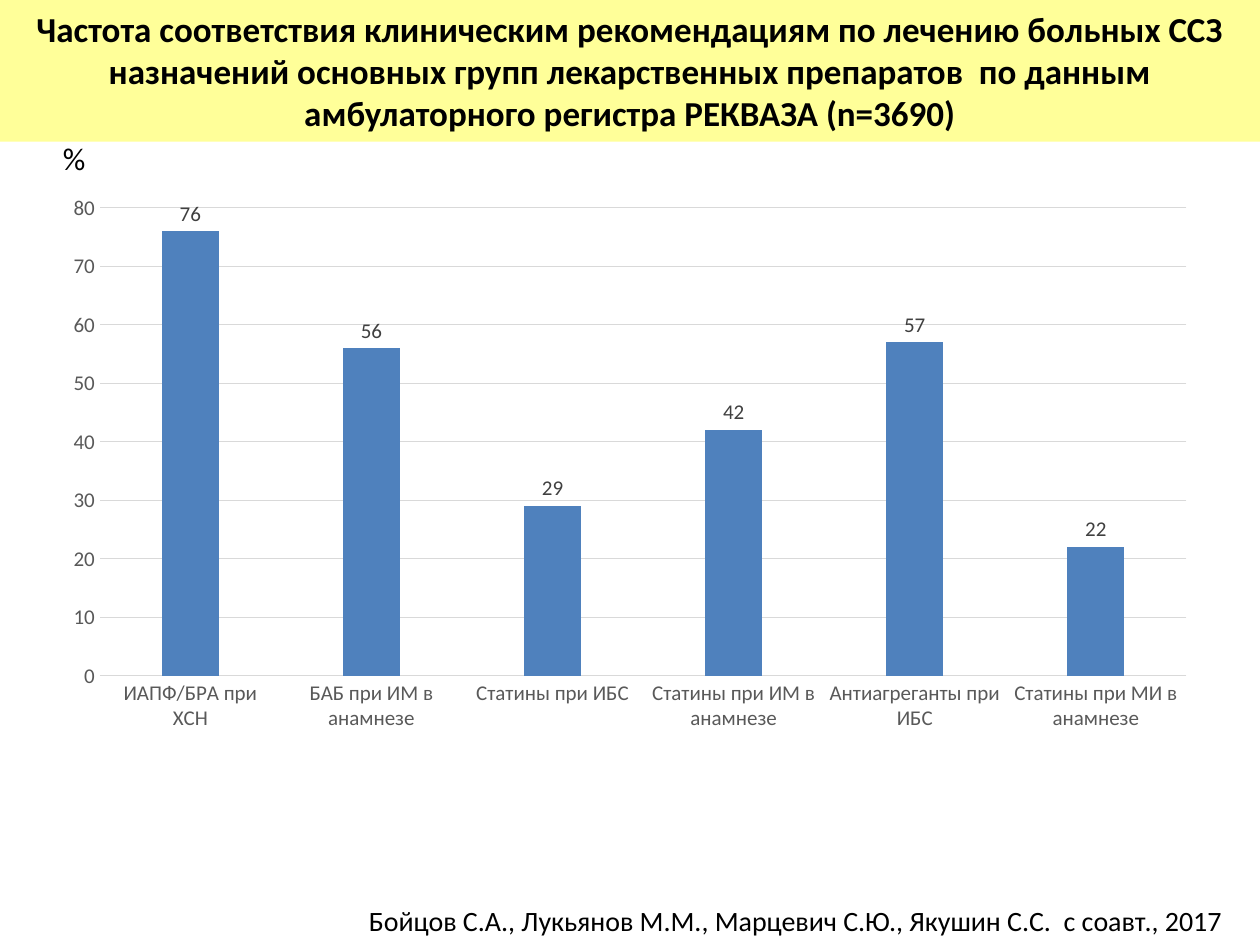
from typing import NamedTuple

from pptx import Presentation
from pptx.chart.data import CategoryChartData
from pptx.dml.color import RGBColor
from pptx.enum.chart import XL_CHART_TYPE, XL_LABEL_POSITION, XL_TICK_MARK
from pptx.enum.shapes import MSO_SHAPE
from pptx.enum.text import MSO_ANCHOR, MSO_AUTO_SIZE, PP_ALIGN
from pptx.util import Inches, Pt

FONT = "Calibri"
BLACK = RGBColor(0x00, 0x00, 0x00)
BANNER_YELLOW = RGBColor(0xFF, 0xFF, 0x99)
BAR_BLUE = RGBColor(0x4F, 0x81, 0xBD)
GRID_GREY = RGBColor(0xD9, 0xD9, 0xD9)
AXIS_GREY = RGBColor(0x59, 0x59, 0x59)
LABEL_GREY = RGBColor(0x40, 0x40, 0x40)

SLIDE_WIDTH, SLIDE_HEIGHT = Inches(10), Inches(7.5)

TITLE = (
    "Частота соответствия клиническим рекомендациям по лечению больных ССЗ "
    "назначений основных групп лекарственных препаратов  по данным "
    "амбулаторного регистра РЕКВАЗА (n=3690)"
)
CITATION = "Бойцов С.А., Лукьянов М.М., Марцевич С.Ю., Якушин С.С.  с соавт., 2017"


class Box(NamedTuple):
    """Place and size as shares of the slide's width and height."""
    left: float
    top: float
    width: float
    height: float

    def emu(self) -> tuple:
        return (
            int(self.left * SLIDE_WIDTH), int(self.top * SLIDE_HEIGHT),
            int(self.width * SLIDE_WIDTH), int(self.height * SLIDE_HEIGHT),
        )


class Prescription(NamedTuple):
    group: str
    percent: int


PRESCRIPTIONS = [
    Prescription("ИАПФ/БРА при ХСН", 76),
    Prescription("БАБ при ИМ в анамнезе", 56),
    Prescription("Статины при ИБС", 29),
    Prescription("Статины при ИМ в анамнезе", 42),
    Prescription("Антиагреганты при ИБС", 57),
    Prescription("Статины при МИ в анамнезе", 22),
]


def style_font(font, size: float, color: RGBColor, bold: bool = False) -> None:
    font.name = FONT
    font.size = Pt(size)
    font.bold = bold
    font.color.rgb = color


def write(frame, text: str, size: float, align: PP_ALIGN, bold: bool = False) -> None:
    paragraph = frame.paragraphs[0]
    paragraph.alignment = align
    run = paragraph.add_run()
    run.text = text
    style_font(run.font, size, BLACK, bold)


def add_label(slide, box: Box, text: str, size: float, align: PP_ALIGN, wrap: bool) -> None:
    frame = slide.shapes.add_textbox(*box.emu()).text_frame
    frame.word_wrap = wrap
    frame.auto_size = MSO_AUTO_SIZE.SHAPE_TO_FIT_TEXT
    write(frame, text, size, align)


def add_banner(slide, box: Box) -> None:
    banner = slide.shapes.add_shape(MSO_SHAPE.RECTANGLE, *box.emu())
    banner.shadow.inherit = False
    banner.fill.solid()
    banner.fill.fore_color.rgb = BANNER_YELLOW
    banner.line.fill.background()
    banner.text_frame.word_wrap = True
    banner.text_frame.vertical_anchor = MSO_ANCHOR.MIDDLE
    write(banner.text_frame, TITLE, 20, PP_ALIGN.CENTER, bold=True)


def style_line(line) -> None:
    line.color.rgb = GRID_GREY
    line.width = Pt(0.75)


def add_prescription_chart(slide, box: Box) -> None:
    data = CategoryChartData()
    data.categories = [item.group for item in PRESCRIPTIONS]
    data.add_series("Series 1", [item.percent for item in PRESCRIPTIONS])
    chart = slide.shapes.add_chart(
        XL_CHART_TYPE.COLUMN_CLUSTERED, *box.emu(), data
    ).chart
    chart.has_title = False
    chart.has_legend = False
    style_font(chart.font, 10, BLACK)

    for axis in (chart.category_axis, chart.value_axis):
        axis.major_tick_mark = axis.minor_tick_mark = XL_TICK_MARK.NONE
        style_font(axis.tick_labels.font, 12, AXIS_GREY)
    style_line(chart.category_axis.format.line)
    chart.value_axis.format.line.fill.background()
    style_line(chart.value_axis.major_gridlines.format.line)

    plot = chart.plots[0]
    plot.vary_by_categories = False
    plot.gap_width = 219
    plot.overlap = -27
    bars = plot.series[0]
    bars.format.fill.solid()
    bars.format.fill.fore_color.rgb = BAR_BLUE
    bars.data_labels.show_value = True
    bars.data_labels.position = XL_LABEL_POSITION.OUTSIDE_END
    style_font(bars.data_labels.font, 12, LABEL_GREY)


def main() -> None:
    presentation = Presentation()
    presentation.slide_width = SLIDE_WIDTH
    presentation.slide_height = SLIDE_HEIGHT
    slide = presentation.slides.add_slide(presentation.slide_layouts[6])

    add_label(slide, Box(0.16, 0.95, 0.82, 0.05), CITATION, 16, PP_ALIGN.RIGHT, wrap=True)
    add_prescription_chart(slide, Box(0.04, 0.195, 0.92, 0.59))
    add_label(slide, Box(0.04, 0.14, 0.04, 0.05), "%", 18, PP_ALIGN.LEFT, wrap=False)
    add_banner(slide, Box(0, 0, 1, 0.15))

    presentation.save("out.pptx")


if __name__ == "__main__":
    main()
